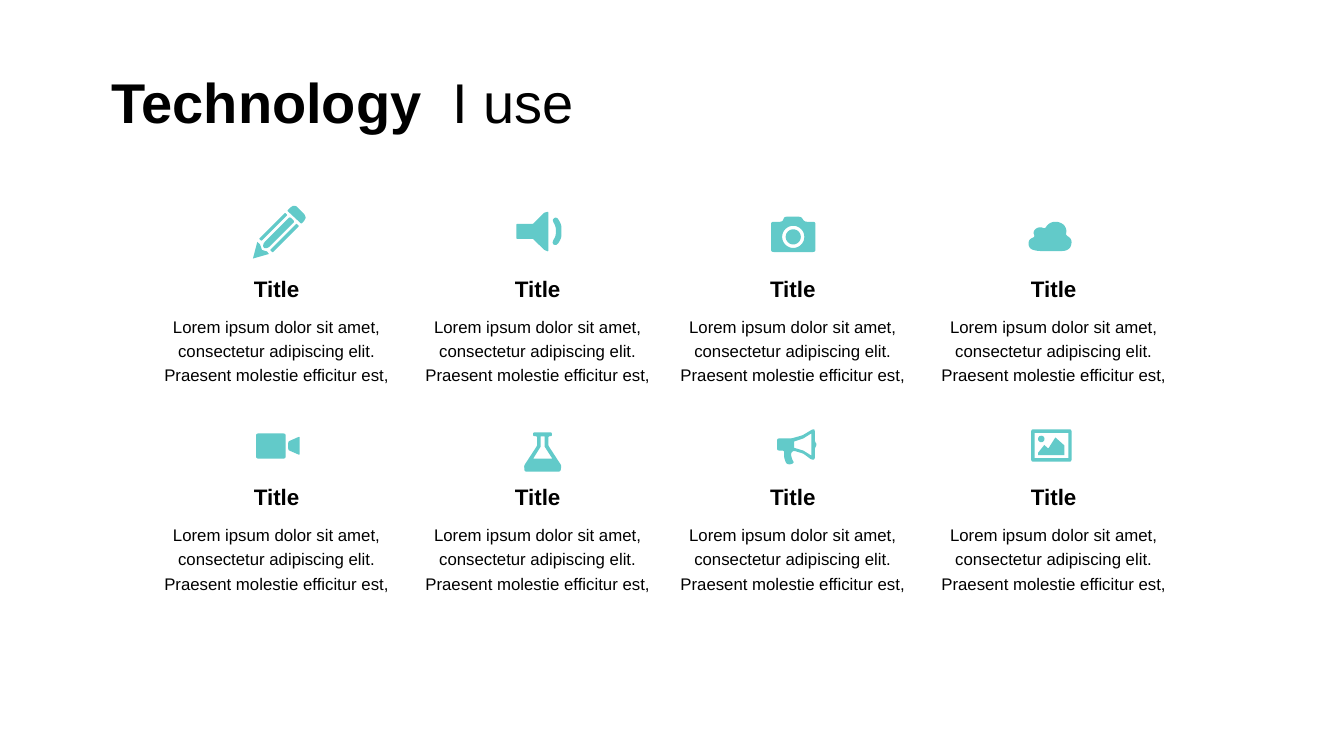
"""Build the "Technology I use" slide: eight icons, each with a title and a short text."""
from math import cos, pi, sin

from pptx import Presentation
from pptx import util as u
from pptx.dml.color import RGBColor
from pptx.enum import text as t

TEAL = RGBColor(0x62, 0xCA, 0xC9)
BLACK = RGBColor(0, 0, 0)
FONT = "Arial"
UNIT = 0.72

HEAD = [("Technology  ", True), ("I use", False)]
NAME = "Title"
BODY = "Lorem ipsum dolor sit amet, consectetur adipiscing elit. Praesent molestie efficitur est,"

COLS = [105.1, 291.6, 473.8, 660.2]
ROWS = [(193, 219.6), (341.4, 368.6)]
WIDE = 185


def dot(x, y, size):
    """Return the outline of a circle."""
    turns = [2 * pi * i / 32 for i in range(32)]
    return 0, [(x + size * cos(a), y + size * sin(a)) for a in turns]


def box(left, top, right, low, bend):
    """Return the outline of a box with rounded corners."""
    return bend, [(left, top), (right, top), (right, low), (left, low)]


PENCIL = [
    (1, [(34, 5), (37, 2), (40, 0), (43, 0.5), (51, 8.5), (52.5, 12), (50.5, 15.5), (48, 18)]),
    (1, [(43.2, 17.8), (45.8, 20.3), (19.5, 46.6), (17, 44)]),
    (1, [(32, 7), (34.2, 9.3), (8.5, 35), (6, 33)]),
    (2, [(36.6, 11), (41.4, 15.8), (15.6, 41.6), (12, 42.6), (10, 41), (10.4, 37.4)]),
    (0, [(0, 52.5), (4.3, 36), (7, 38.4), (9, 44), (14, 45.5), (15.8, 48)]),
]
SOUND = [
    (1, [(0.4, 12.2), (16.8, 12.2), (28, 1), (32, 0), (32, 39.6), (28, 38), (16.8, 27), (0.4, 27)]),
    (3, [(38, 6), (41, 6), (45, 13), (45, 26), (41, 33), (37, 33), (36, 30),
         (39.5, 24), (39.5, 15), (36, 8.5)]),
]
CAMERA = [
    (2.5, [(0, 5), (11.5, 5), (13, 0), (30, 0), (33, 5), (44, 5), (44, 35), (0, 35)]),
    dot(22, 20, 11),
    dot(22, 20, 7.5),
]
CLOUD = [
    (3, [(0, 22), (1.5, 17), (7, 15), (5, 11), (7, 7), (12, 5), (17, 7), (19, 3), (24, 0),
         (30, 0), (36, 3), (38.5, 9), (37, 13), (42, 16), (43.5, 20), (42, 26), (37, 29),
         (9, 29), (2, 27)]),
]
VIDEO = [
    box(0, 0, 29.5, 25, 2.5),
    (1.5, [(32, 8), (43.4, 3), (43.4, 21.5), (32, 16.5)]),
]
FLASK = [
    (1.5, [(9, 0), (27.5, 0), (27.5, 3.8), (24, 3.8), (24, 13), (37, 33), (36, 38.8),
           (0.5, 38.8), (0, 33), (13, 13), (13, 3.8), (9, 3.8)]),
    (0, [(16.5, 4), (20.3, 4), (20.3, 14), (28, 26), (9, 26), (16.5, 14)]),
]
HORN = [
    (2, [(0, 9), (14, 9), (25, 6), (35, 0), (37.4, 0), (37.4, 12), (39.6, 15), (37.4, 18.5),
         (37.4, 30), (34, 30), (26, 24), (16, 21), (13.5, 24), (15, 30), (17, 33), (13, 35),
         (9, 34), (7, 28), (7, 21), (0, 21)]),
    (0, [(34, 4), (34, 26), (26, 21), (17, 18.3), (17, 12), (26, 9)]),
]
PHOTO = [
    box(0, 0, 40, 32, 2),
    box(3.5, 3.5, 37, 28.5, 0),
    dot(10, 9.5, 3.2),
    (0, [(7, 25.5), (7, 23), (13, 15.5), (17, 19), (24, 8), (33, 16), (33, 25.5)]),
]

ICONS = [
    (180.7, 146.9, PENCIL),
    (368.6, 151.2, SOUND),
    (550.8, 154.8, CAMERA),
    (734.4, 158.4, CLOUD),
    (182.9, 309.6, VIDEO),
    (374.4, 308.9, FLASK),
    (555.1, 306.7, HORN),
    (736.6, 306.7, PHOTO),
]


def smooth(bend, dots):
    """Return the outline with each corner replaced by a short curve."""
    if not bend:
        return dots
    curve = []
    for i, (x, y) in enumerate(dots):
        ends = []
        for a, b in (dots[i - 1], dots[(i + 1) % len(dots)]):
            long = ((a - x) ** 2 + (b - y) ** 2) ** 0.5
            part = min(bend / long, 0.5)
            ends.append((x + (a - x) * part, y + (b - y) * part))
        (ax, ay), (bx, by) = ends
        for k in (0, 0.25, 0.5, 0.75, 1):
            p, q, r = (1 - k) ** 2, 2 * k * (1 - k), k * k
            curve.append((p * ax + q * x + r * bx, p * ay + q * y + r * by))
    return curve


def draw(slide, left, top, parts):
    """Draw one icon as a single freeform."""
    pen = None
    for bend, dots in parts:
        spots = [(u.Pt(left + x * UNIT), u.Pt(top + y * UNIT)) for x, y in smooth(bend, dots)]
        if pen is None:
            pen = slide.shapes.build_freeform(*spots[0], scale=1.0)
        else:
            pen.move_to(*spots[0])
        pen.add_line_segments(spots[1:], close=True)
    icon = pen.convert_to_shape()
    icon.shadow.inherit = False
    icon.fill.solid()
    icon.fill.fore_color.rgb = TEAL
    icon.line.fill.background()


def write(slide, place, runs, size, align, space):
    """Add a text box with one paragraph of (wording, bold) runs."""
    frame = slide.shapes.add_textbox(*map(u.Pt, place)).text_frame
    frame.word_wrap = True
    para = frame.paragraphs[0]
    para.alignment = align
    para.line_spacing = space
    for words, bold in runs:
        run = para.add_run()
        run.text = words
        run.font.name = FONT
        run.font.size = u.Pt(size)
        run.font.bold = bold
        run.font.color.rgb = BLACK


def main():
    """Build and save the deck."""
    deck = Presentation()
    deck.slide_width, deck.slide_height = u.Pt(960), u.Pt(540)
    slide = deck.slides.add_slide(deck.slide_layouts[6])
    mid = t.PP_ALIGN.CENTER
    write(slide, (72.7, 52.6, 566.6, 47.5), HEAD, 40, t.PP_ALIGN.LEFT, u.Pt(40))
    for high, low in ROWS:
        for left in COLS:
            write(slide, (left, high, WIDE, 26.6), [(NAME, True)], 16, mid, 1.0)
            write(slide, (left, low, WIDE, 59.8), [(BODY, False)], 12, mid, 1.2)
    for icon in ICONS:
        draw(slide, *icon)
    deck.save("out.pptx")


if __name__ == "__main__":
    main()
